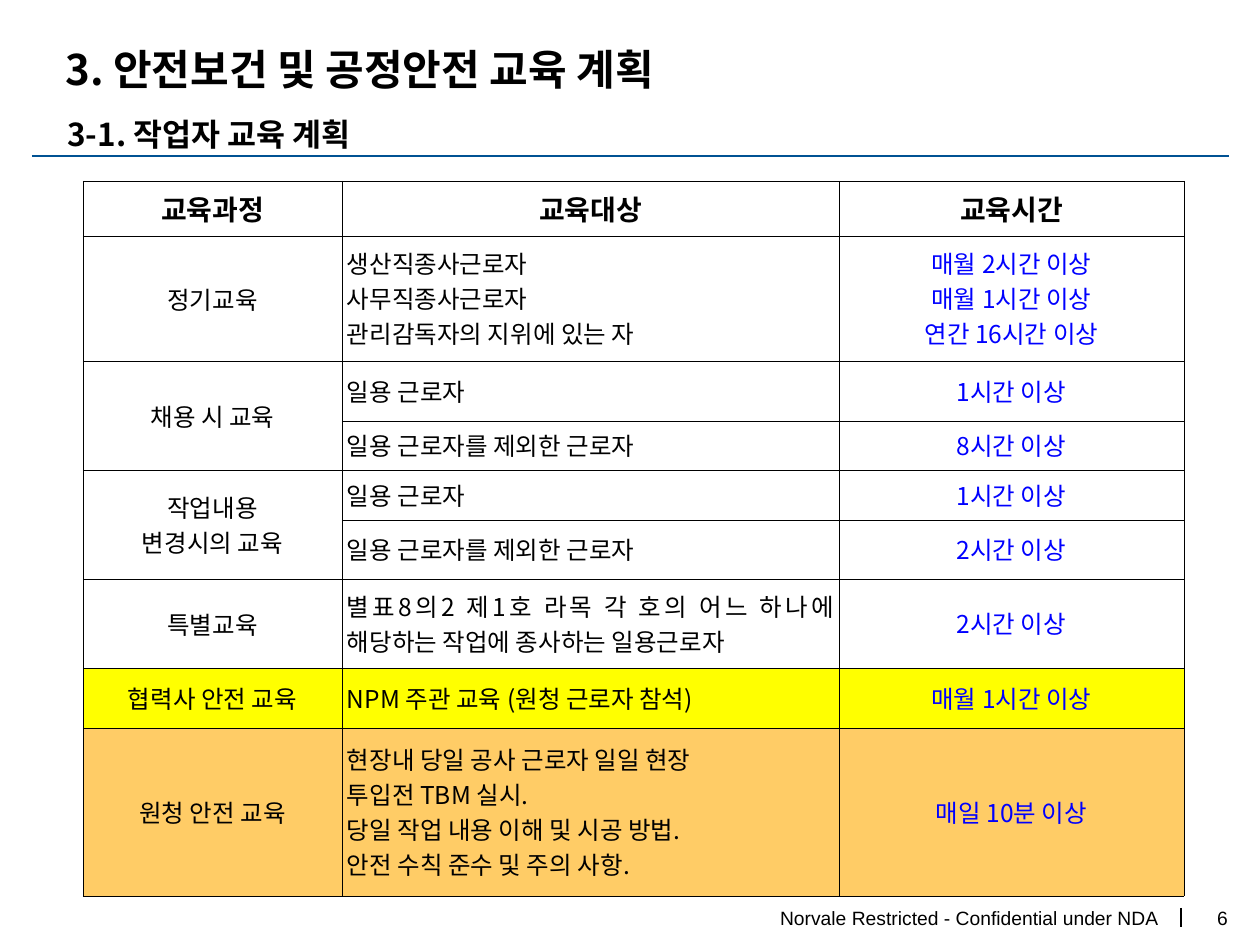
from lxml.etree import SubElement
from pptx import Presentation
from pptx.dml.color import RGBColor
from pptx.enum.shapes import MSO_CONNECTOR
from pptx.enum.text import MSO_ANCHOR as ANCHOR, PP_ALIGN as ALIGN
from pptx.oxml.ns import qn
from pptx.util import Pt

PX = 914400 / 126
KOREAN, LATIN = "Noto Sans CJK KR", "Arial"
BLACK, BLUE, YELLOW, ORANGE = "000000", "0000FF", "FFFF00", "FFCC66"

# text, box, size, font, bold, alignment, line spacing
LABELS = [
    ("3. 안전보건 및 공정안전 교육 계획", (53, 37, 725, 64), 24, KOREAN, True, ALIGN.LEFT, None),
    ("3-1. 작업자 교육 계획", (55, 101, 834, 58), 18, KOREAN, True, ALIGN.LEFT, 1.2),
    ("Norvale Restricted - Confidential under NDA", (672, 900, 500, 36), 11, LATIN, False, ALIGN.RIGHT, None),
    ("6", (1154, 900, 87, 36), 11, LATIN, False, ALIGN.RIGHT, None),
]
# start, end, colour, width
RULES = [
    ((32, 156), (1229, 156), "005293", 0.75),
    ((1181, 908), (1181, 927), BLACK, 1),
]

HEADER = ("교육과정", "교육대상", "교육시간")
# course, fill, [(trainees, hours, row height)]
COURSES = [
    ("정기교육", None, [
        ("생산직종사근로자\n사무직종사근로자\n관리감독자의 지위에 있는 자",
         "매월 2시간 이상\n매월 1시간 이상\n연간 16시간 이상", 125)]),
    ("채용 시 교육", None, [
        ("일용 근로자", "1시간 이상", 60),
        ("일용 근로자를 제외한 근로자", "8시간 이상", 49)]),
    ("작업내용\n변경시의 교육", None, [
        ("일용 근로자", "1시간 이상", 50),
        ("일용 근로자를 제외한 근로자", "2시간 이상", 59)]),
    ("특별교육", None, [
        ("별표8의2 제1호 라목 각 호의 어느 하나에 해당하는 작업에 종사하는 일용근로자",
         "2시간 이상", 89)]),
    ("협력사 안전 교육", YELLOW, [
        ("NPM 주관 교육 (원청 근로자 참석)", "매월 1시간 이상", 60)]),
    ("원청 안전 교육", ORANGE, [
        ("현장내 당일 공사 근로자 일일 현장\n투입전 TBM 실시.\n"
         "당일 작업 내용 이해 및 시공 방법.\n안전 수칙 준수 및 주의 사항.",
         "매일 10분 이상", 168)]),
]
TABLE_LEFT, TABLE_TOP, HEADER_HEIGHT = 83, 181, 55
COLUMN_WIDTHS = (259, 497, 345)


def px(length):
    return round(length * PX)


def rgb(colour):
    return RGBColor.from_string(colour)


def write(frame, text, size, font=KOREAN, bold=False, colour=BLACK, align=ALIGN.LEFT, spacing=None):
    """Fill a text frame, one paragraph per line, in one style."""
    frame.text = text
    for paragraph in frame.paragraphs:
        paragraph.alignment = align
        paragraph.line_spacing = spacing
        style = paragraph.font
        style.size, style.bold, style.name = Pt(size), bold, font
        style.color.rgb = rgb(colour)
        properties = paragraph._p.pPr.find(qn("a:defRPr"))
        SubElement(properties, qn("a:ea"), typeface=font)


def add_label(slide, text, box, size, font, bold, align, spacing):
    frame = slide.shapes.add_textbox(*map(px, box)).text_frame
    frame.word_wrap = True
    frame.vertical_anchor = ANCHOR.TOP if spacing else ANCHOR.MIDDLE
    if align == ALIGN.RIGHT:
        frame.margin_right = px(13)
    write(frame, text, size, font, bold, align=align, spacing=spacing)


def add_rule(slide, start, end, colour, width):
    rule = slide.shapes.add_connector(MSO_CONNECTOR.STRAIGHT, *map(px, start + end))
    rule.line.color.rgb = rgb(colour)
    rule.line.width = Pt(width)
    SubElement(rule._element.spPr, qn("a:effectLst"))


def frame_cell(cell, fill):
    """Set margins, thin black borders and the fill of a cell."""
    cell.margin_left = cell.margin_right = px(5)
    cell.margin_top = cell.margin_bottom = 0
    cell.vertical_anchor = ANCHOR.MIDDLE
    for side in ("lnL", "lnR", "lnT", "lnB"):
        border = SubElement(cell._tc.get_or_add_tcPr(), qn(f"a:{side}"), w=str(Pt(0.25)))
        SubElement(SubElement(border, qn("a:solidFill")), qn("a:srgbClr"), val=BLACK)
    if fill:
        cell.fill.solid()
        cell.fill.fore_color.rgb = rgb(fill)
    else:
        cell.fill.background()


def add_training_table(slide):
    heights = [HEADER_HEIGHT] + [group[2] for course in COURSES for group in course[2]]
    area = (TABLE_LEFT, TABLE_TOP, sum(COLUMN_WIDTHS), sum(heights))
    table = slide.shapes.add_table(len(heights), len(COLUMN_WIDTHS), *map(px, area)).table
    table.first_row = table.horz_banding = False
    for column, width in zip(table.columns, COLUMN_WIDTHS):
        column.width = px(width)
    for row, height in zip(table.rows, heights):
        row.height = px(height)

    for column, heading in enumerate(HEADER):
        frame_cell(table.cell(0, column), None)
        write(table.cell(0, column).text_frame, heading, 16, bold=True, align=ALIGN.CENTER)

    row = 1
    for course, fill, groups in COURSES:
        first = row
        for trainees, hours, _ in groups:
            course_cell, trainee_cell, hour_cell = (table.cell(row, i) for i in range(3))
            for cell in (course_cell, trainee_cell, hour_cell):
                frame_cell(cell, fill)
            write(trainee_cell.text_frame, trainees, 14, align=ALIGN.JUSTIFY, spacing=Pt(20))
            write(hour_cell.text_frame, hours, 14, colour=BLUE, align=ALIGN.CENTER, spacing=Pt(20))
            row += 1
        if len(groups) > 1:
            table.cell(first, 0).merge(table.cell(row - 1, 0))
        write(table.cell(first, 0).text_frame, course, 14, align=ALIGN.CENTER)


def main():
    deck = Presentation()
    deck.slide_width, deck.slide_height = px(1260), px(945)
    slide = deck.slides.add_slide(deck.slide_layouts[6])
    for rule in RULES:
        add_rule(slide, *rule)
    for label in LABELS:
        add_label(slide, *label)
    add_training_table(slide)
    deck.save("out.pptx")


if __name__ == "__main__":
    main()
